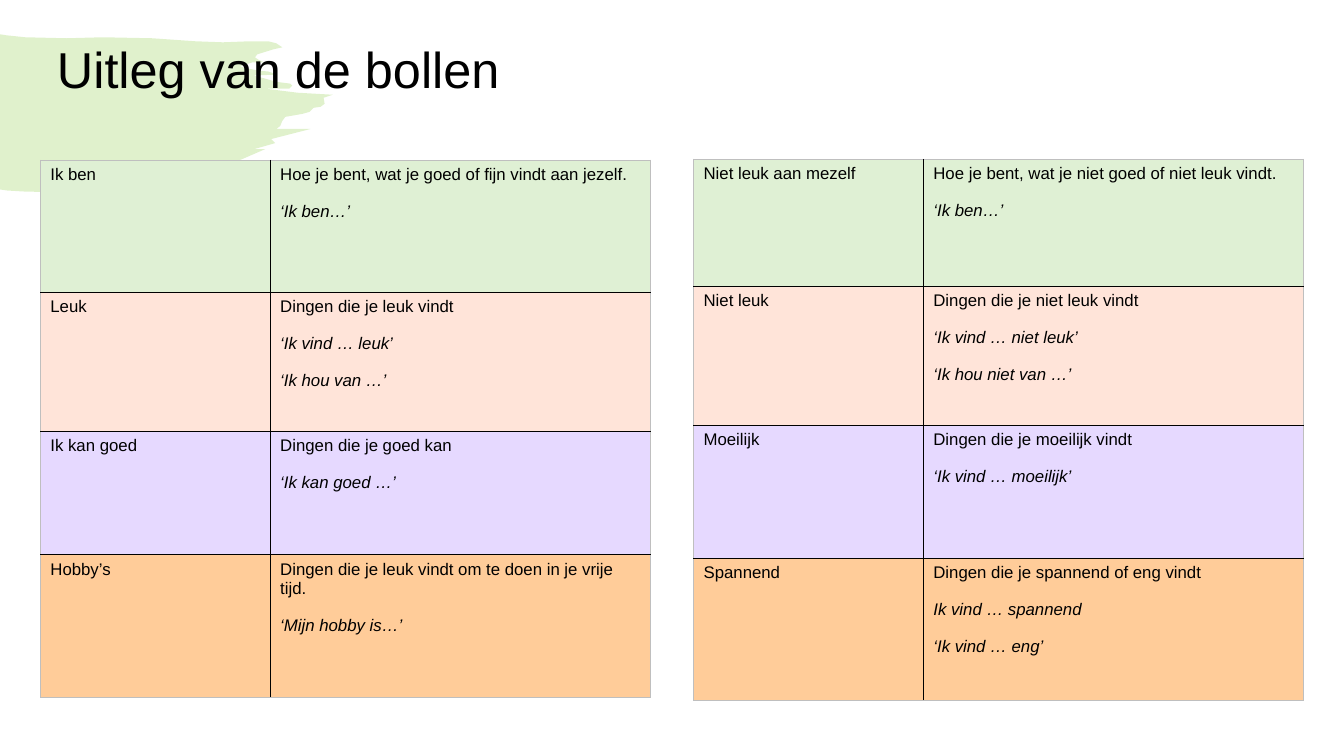
from dataclasses import dataclass

from lxml.etree import SubElement as Sub
from pptx import Presentation
from pptx.dml.color import RGBColor as Rgb
from pptx.enum.text import MSO_ANCHOR as Anchor
from pptx.oxml import parse_xml
from pptx.oxml.ns import nsdecls, qn
from pptx.util import Inches, Pt

WIDE, HIGH = Inches(13.33), Inches(7.5)


@dataclass(frozen=True)
class Theme:
    """Colours and type sizes of the slide."""
    font: str = "Arial"
    head: int = 36
    body: int = 12
    gap: int = 13
    ink: str = "000000"
    edge: str = "BFBFBF"
    brush: str = "66BB00"
    alpha: int = 20
    rows: tuple = ("DFF0D4", "FFE4D9", "E6D9FF", "FFCC99")


THEME = Theme()
COLS = (17.1, 28.3)

BRUSH = (
    (0, 34), (6, 35), (25, 37), (66, 38), (102, 37), (151, 38), (194, 41),
    (221, 42), (248, 41), (266, 41), (274, 43), (280, 47), (271, 49),
    (255, 54), (253, 57), (256, 59), (262, 62), (250, 62), (238, 66),
    (246, 68), (256, 70), (266, 71), (275, 74), (251, 75), (263, 78),
    (273, 81), (280, 82), (288, 83), (290, 85), (287, 88), (284, 88),
    (263, 88), (295, 92), (330, 94), (321, 97), (322, 103), (318, 106),
    (311, 107), (307, 111), (300, 113), (283, 116), (280, 120), (278, 125),
    (274, 128), (308, 128), (269, 138), (273, 142), (252, 148), (263, 148),
    (240, 158), (197, 172), (102, 188), (65, 191), (23, 190), (7, 189),
    (0, 188),
)

LIKES = (
    ("Ik ben", "Hoe je bent, wat je goed of fijn vindt aan jezelf.",
     "‘Ik ben…’"),
    ("Leuk", "Dingen die je leuk vindt", "‘Ik vind … leuk’",
     "‘Ik hou van …’"),
    ("Ik kan goed", "Dingen die je goed kan", "‘Ik kan goed …’"),
    ("Hobby’s", "Dingen die je leuk vindt om te doen in je vrije tijd.",
     "‘Mijn hobby is…’"),
)

WORRIES = (
    ("Niet leuk aan mezelf",
     "Hoe je bent, wat je niet goed of niet leuk vindt.", "‘Ik ben…’"),
    ("Niet leuk", "Dingen die je niet leuk vindt", "‘Ik vind … niet leuk’",
     "‘Ik hou niet van …’"),
    ("Moeilijk", "Dingen die je moeilijk vindt", "‘Ik vind … moeilijk’"),
    ("Spannend", "Dingen die je spannend of eng vindt",
     "Ik vind … spannend", "‘Ik vind … eng’"),
)


def across(share):
    """Turn a percentage of the slide's width into a length."""
    return int(WIDE * share / 100)


def down(share):
    """Turn a percentage of the slide's height into a length."""
    return int(HIGH * share / 100)


def style(para, size):
    """Set the font of a paragraph."""
    para.font.name = THEME.font
    para.font.size = Pt(size)
    para.font.color.rgb = Rgb.from_string(THEME.ink)


def add_brush(slide):
    """Draw the pale brush stroke behind the title."""
    pen = slide.shapes.build_freeform(*BRUSH[0], scale=Inches(0.01))
    pen.add_line_segments(BRUSH[1:], close=True)
    shape = pen.convert_to_shape()
    shape.shadow.inherit = False
    shape.line.fill.background()
    shape.fill.solid()
    shape.fill.fore_color.rgb = Rgb.from_string(THEME.brush)
    tint = next(shape.fill._xPr.iter(qn("a:srgbClr")))
    Sub(tint, qn("a:alpha")).set("val", str(THEME.alpha * 1000))


def add_title(slide, text):
    """Write the slide's title."""
    box = slide.shapes.add_textbox(
        across(3.5), down(5.3), across(76.3), down(22.1))
    frame = box.text_frame
    frame.word_wrap = True
    frame.vertical_anchor = Anchor.TOP
    para = frame.paragraphs[0]
    para.text = text
    para.line_spacing = 0.9
    style(para, THEME.head)


def set_edges(cell, outer):
    """Rule the four sides of a cell, paler on the table's outside."""
    props = cell._tc.get_or_add_tcPr()
    for spot, side in enumerate("LRTB"):
        tone, width = (THEME.edge, 0.5) if side in outer else (THEME.ink, 1)
        props.insert(spot, parse_xml(
            f'<a:ln{side} {nsdecls("a")} w="{Pt(width)}"><a:solidFill>'
            f'<a:srgbClr val="{tone}"/></a:solidFill></a:ln{side}>'))


def fill_cell(cell, lines, tone):
    """Write a plain first line and italic examples on a coloured cell."""
    cell.fill.solid()
    cell.fill.fore_color.rgb = Rgb.from_string(tone)
    frame = cell.text_frame
    for i, line in enumerate(lines):
        para = frame.add_paragraph() if i else frame.paragraphs[0]
        para.text = line
        style(para, THEME.body)
        if i:
            para.font.italic = True
            para.space_before = Pt(THEME.gap)


def add_grid(slide, left, top, rows, topics):
    """Add a table with one coloured row for each topic."""
    table = slide.shapes.add_table(
        len(rows), len(COLS), across(left), down(top),
        across(sum(COLS)), down(sum(rows))).table
    table.first_row = table.horz_banding = False
    for col, share in zip(table.columns, COLS):
        col.width = across(share)
    for r, (share, topic) in enumerate(zip(rows, topics)):
        table.rows[r].height = down(share)
        ends = ("T" if r == 0 else "") + ("B" if r == len(rows) - 1 else "")
        for c, lines in enumerate((topic[:1], topic[1:])):
            cell = table.cell(r, c)
            fill_cell(cell, lines, THEME.rows[r])
            set_edges(cell, ends + "LR"[c])


def main():
    """Build the slide and save it."""
    deck = Presentation()
    deck.slide_width, deck.slide_height = WIDE, HIGH
    slide = deck.slides.add_slide(deck.slide_layouts[6])
    add_brush(slide)
    add_title(slide, "Uitleg van de bollen")
    add_grid(slide, 51.6, 21.07, (16.8, 18.4, 17.6, 18.8), WORRIES)
    add_grid(slide, 3, 21.2, (17.5, 18.4, 16.3, 18.8), LIKES)
    deck.save("out.pptx")


if __name__ == "__main__":
    main()
